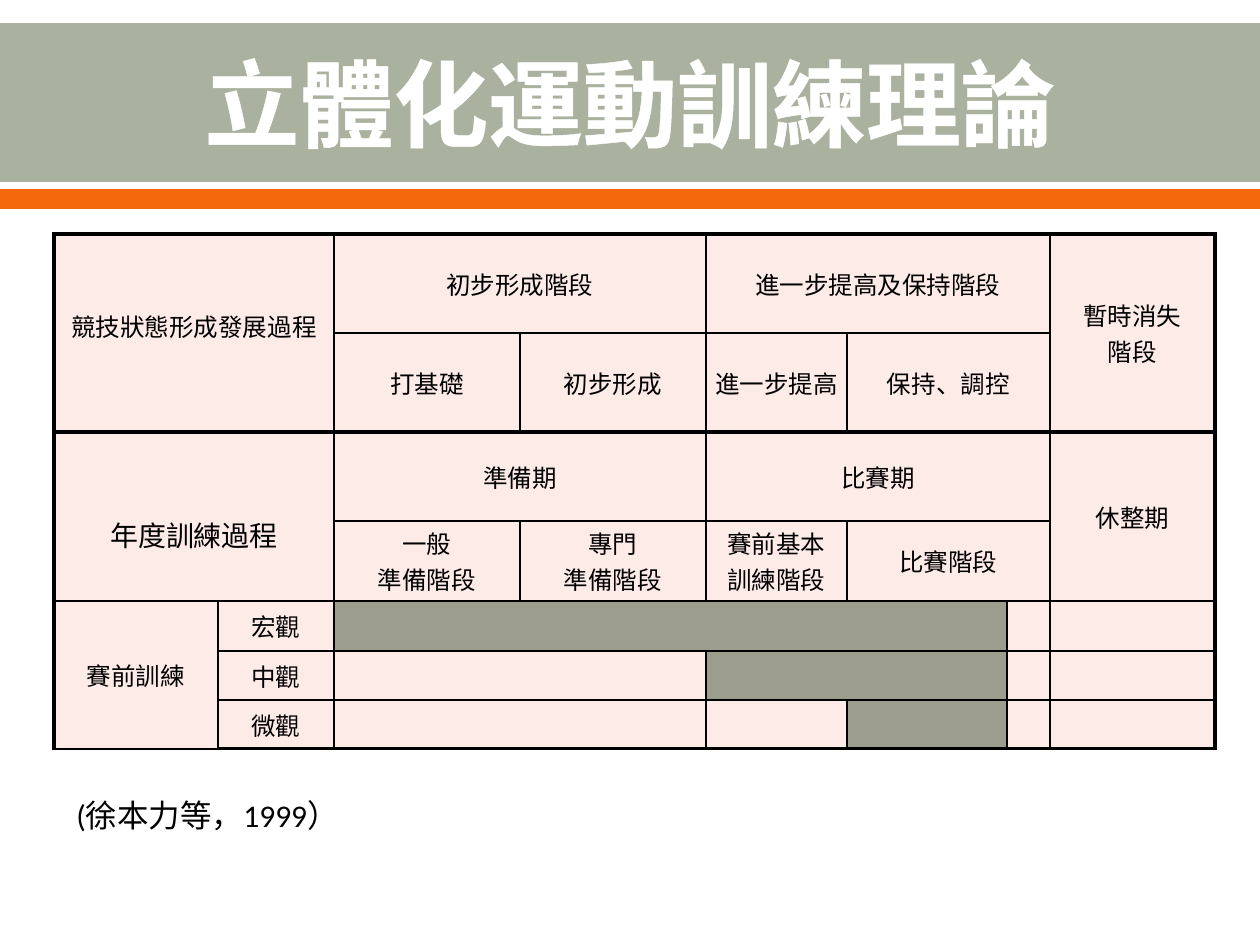
from lxml.etree import SubElement
from pptx import Presentation
from pptx.dml.color import RGBColor
from pptx.enum.shapes import MSO_SHAPE
from pptx.enum.text import MSO_ANCHOR, MSO_AUTO_SIZE, PP_ALIGN
from pptx.oxml.ns import qn
from pptx.util import Emu, Pt

EMU_PER_PX = 914400 / 126
WHITE, BLACK, SAGE, ORANGE = "FFFFFF", "000000", "ABB19F", "F4680B"
BLUSH, OLIVE = "FDEBE7", "9D9D8E"
COLUMNS = [164, 116, 186, 186, 141, 160, 43, 165]
ROWS = [99, 99, 89, 80, 50, 49, 49]
THICK_ROW_EDGES = (0, 2, len(ROWS))
THICK_COLUMN_EDGES = (0, len(COLUMNS))
CELL_FORMAT = {
    "vertical_anchor": MSO_ANCHOR.MIDDLE,
    "margin_left": Pt(5), "margin_right": Pt(5),
    "margin_top": 0, "margin_bottom": 0,
}
STAGES = [
    (0, 0, 2, 2, "競技狀態形成發展過程"),
    (0, 2, 1, 2, "初步形成階段"),
    (0, 4, 1, 3, "進一步提高及保持階段"),
    (0, 7, 2, 1, "暫時消失\n階段"),
    (1, 2, 1, 1, "打基礎"),
    (1, 3, 1, 1, "初步形成"),
    (1, 4, 1, 1, "進一步提高"),
    (1, 5, 1, 2, "保持、調控"),
    (2, 0, 2, 2, "年度訓練過程"),
    (2, 2, 1, 2, "準備期"),
    (2, 4, 1, 3, "比賽期"),
    (2, 7, 2, 1, "休整期"),
    (3, 2, 1, 1, "一般\n準備階段"),
    (3, 3, 1, 1, "專門\n準備階段"),
    (3, 4, 1, 1, "賽前基本\n訓練階段"),
    (3, 5, 1, 2, "比賽階段"),
    (4, 0, 3, 1, "賽前訓練"),
    (4, 1, 1, 1, "宏觀"),
    (5, 1, 1, 1, "中觀"),
    (6, 1, 1, 1, "微觀"),
    (4, 2, 1, 4, ""),
    (5, 2, 1, 2, ""),
    (5, 4, 1, 2, ""),
    (6, 2, 1, 2, ""),
]
ACTIVE_PERIODS = [(4, 2), (5, 4), (6, 5)]


def px(length):
    return Emu(round(length * EMU_PER_PX))


def place(*box):
    return [px(length) for length in box]


def color(value):
    return RGBColor.from_string(value)


def apply(target, values):
    for name, value in values.items():
        setattr(target, name, value)


def style_font(font, size, shade, bold=False):
    apply(font, {"name": "Calibri", "size": Pt(size), "bold": bold})
    font.color.rgb = color(shade)


def add_line(parent, tag, width, shade):
    line = SubElement(parent, qn(tag), w=str(Pt(width)))
    fill = SubElement(line, qn("a:solidFill"))
    SubElement(fill, qn("a:srgbClr"), val=shade)
    return line


def build_header(slide, left, top, width):
    title = slide.shapes.title
    for offset, height, shade in [(0, 200, WHITE), (9, 159, SAGE), (175, 20, ORANGE)]:
        band = slide.shapes.add_shape(
            MSO_SHAPE.RECTANGLE, *place(left, top + offset, width, height))
        band.shadow.inherit = False
        band.fill.solid()
        band.fill.fore_color.rgb = color(shade)
        band.line.fill.background()
        title.element.addprevious(band.element)
    box = place(left + 63, top + 11, width - 126, 154)
    apply(title, dict(zip(("left", "top", "width", "height"), box)))
    title.text_frame.vertical_anchor = MSO_ANCHOR.MIDDLE
    heading = title.text_frame.paragraphs[0]
    heading.alignment = PP_ALIGN.CENTER
    run = heading.add_run()
    run.text = "立體化運動訓練理論"
    style_font(run.font, 54, WHITE, True)
    outline = add_line(run.font._element, "a:ln", 1.1, WHITE)
    run.font._element.insert(0, outline)


def border_cell(cell, row, column):
    edges = [
        ("a:lnL", column in THICK_COLUMN_EDGES),
        ("a:lnR", column + 1 in THICK_COLUMN_EDGES),
        ("a:lnT", row in THICK_ROW_EDGES),
        ("a:lnB", row + 1 in THICK_ROW_EDGES),
    ]
    properties = cell._tc.get_or_add_tcPr()
    for position, (tag, thick) in enumerate(edges):
        edge = add_line(properties, tag, 2.25 if thick else 1, BLACK)
        properties.insert(position, edge)


def build_stage_table(slide, left, top):
    frame = slide.shapes.add_table(
        len(ROWS), len(COLUMNS), *place(left, top, sum(COLUMNS), sum(ROWS)))
    table = frame.table
    apply(table, {"first_row": False, "horz_banding": False})
    for column, width in zip(table.columns, COLUMNS):
        column.width = px(width)
    for row, height in zip(table.rows, ROWS):
        row.height = px(height)
    for row in range(len(ROWS)):
        for column in range(len(COLUMNS)):
            cell = table.cell(row, column)
            apply(cell, CELL_FORMAT)
            cell.fill.solid()
            active = (row, column) in ACTIVE_PERIODS
            cell.fill.fore_color.rgb = color(OLIVE if active else BLUSH)
            border_cell(cell, row, column)
    for row, column, height, width, label in STAGES:
        cell = table.cell(row, column)
        if height * width > 1:
            cell.merge(table.cell(row + height - 1, column + width - 1))
        if not label:
            continue
        cell.text = label
        for paragraph in cell.text_frame.paragraphs:
            paragraph.alignment = PP_ALIGN.CENTER
            for run in paragraph.runs:
                style_font(run.font, 14, BLACK)
    table.cell(0, 0).text_frame.paragraphs[0].line_spacing = Pt(12)
    annual = table.cell(2, 0)
    annual.margin_top = px(36)
    annual.text_frame.paragraphs[0].runs[0].font.size = Pt(16)


def build_citation(slide, left, top, width, height):
    citation = slide.shapes.add_textbox(*place(left, top, width, height))
    apply(citation.text_frame,
          {"word_wrap": False, "auto_size": MSO_AUTO_SIZE.SHAPE_TO_FIT_TEXT})
    run = citation.text_frame.paragraphs[0].add_run()
    run.text = "(徐本力等，1999）"
    style_font(run.font, 18, BLACK)


def main():
    deck = Presentation()
    apply(deck, {"slide_width": px(1260), "slide_height": px(945)})
    slide = deck.slides.add_slide(deck.slide_layouts[5])
    build_header(slide, 0, 14, 1260)
    build_stage_table(slide, 54, 234)
    build_citation(slide, 64, 790, 291, 50)
    deck.save("out.pptx")


if __name__ == "__main__":
    main()
